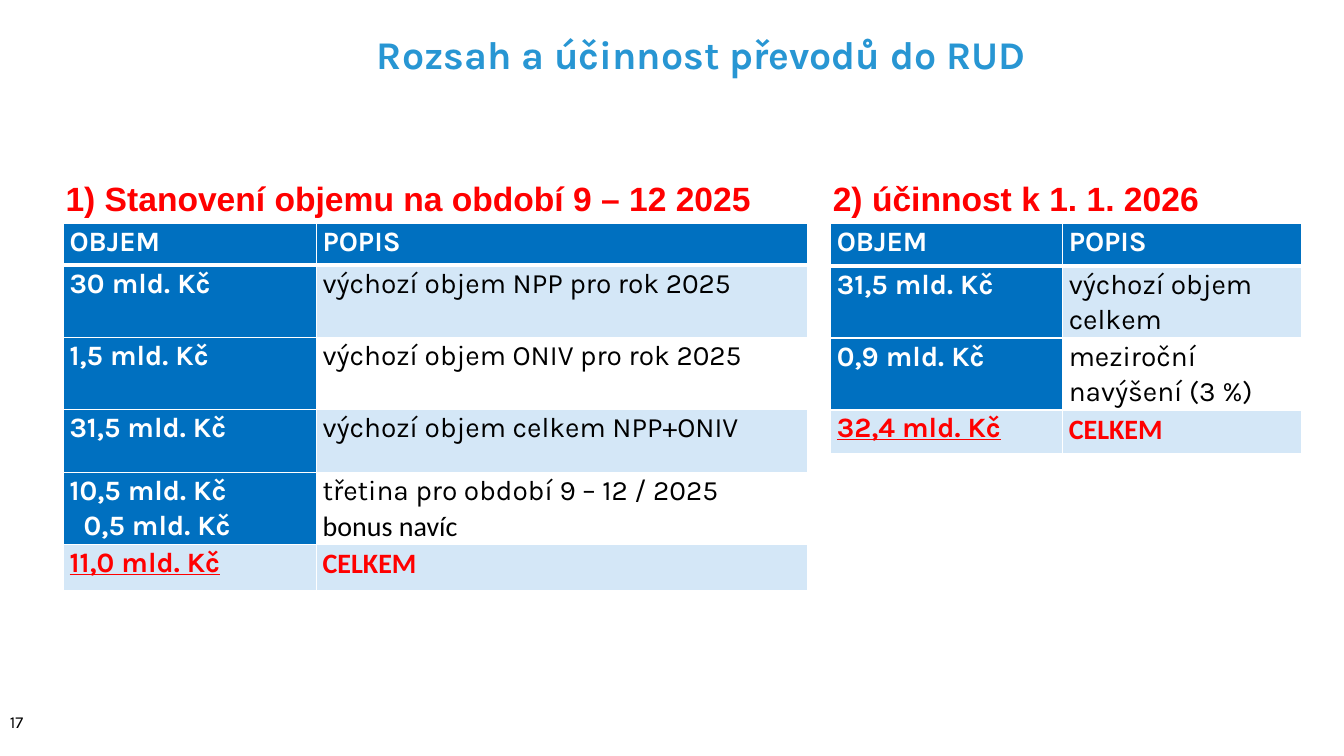
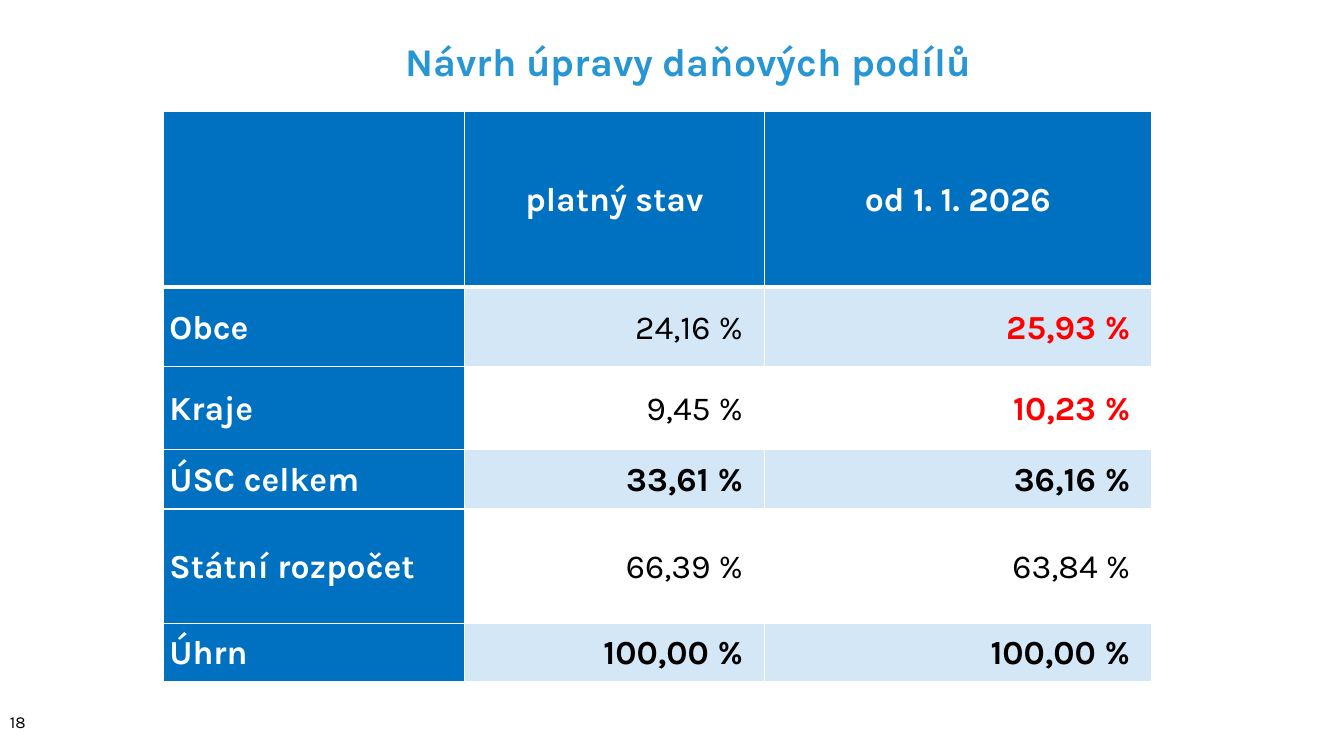
from dataclasses import dataclass

from lxml.etree import SubElement
from pptx import Presentation
from pptx.dml.color import RGBColor
from pptx.enum.text import MSO_ANCHOR, PP_ALIGN
from pptx.oxml.ns import qn
from pptx.util import Inches, Pt


@dataclass(frozen=True)
class Theme:
    """Colours, fonts and type sizes shared by the slides."""

    title: str = "2896D3"
    blue: str = "0070C0"
    light: str = "D4E7F7"
    white: str = "FFFFFF"
    black: str = "000000"
    red: str = "FF0000"
    font: str = "Karla"
    heading_font: str = "Arial"
    accent_font: str = "Calibri"
    title_size: int = 28
    large_size: int = 24
    table_size: int = 20
    number_size: int = 12


THEME = Theme()
LABEL = {"color": THEME.white, "bold": True}
TOTAL = {"color": THEME.red, "bold": True}
TOTAL_AMOUNT = {**TOTAL, "underline": True}
TOTAL_NAME = {**TOTAL, "font": THEME.accent_font}


def write(paragraph, text, *, size=THEME.table_size, font=THEME.font, color=THEME.black,
          bold=False, underline=False, align=PP_ALIGN.LEFT, spacing=1.0, indent=0):
    """Put one formatted run into a paragraph."""
    paragraph._p.get_or_add_pPr().set("marL", str(Inches(indent)))
    paragraph.alignment = align
    paragraph.line_spacing = spacing
    run = paragraph.add_run()
    run.text = text
    run.font.size = Pt(size)
    run.font.name = font
    run.font.bold = bold
    run.font.underline = underline
    run.font.color.rgb = RGBColor.from_string(color)


def set_margins(target, left, top, right, bottom):
    """Set the inner margins of a text frame or cell in inches."""
    target.margin_left, target.margin_top = Inches(left), Inches(top)
    target.margin_right, target.margin_bottom = Inches(right), Inches(bottom)


def add_text(slide, box, text, *, margins=(0.1, 0.05, 0.1, 0.05),
             anchor=MSO_ANCHOR.MIDDLE, **style):
    """Add a text box with one line of text."""
    frame = slide.shapes.add_textbox(*map(Inches, box)).text_frame
    frame.word_wrap = True
    frame.vertical_anchor = anchor
    set_margins(frame, *margins)
    write(frame.paragraphs[0], text, **style)


def add_slide(presentation, title, number, title_position, title_spacing=1.0):
    """Add a slide with its title and page number."""
    slide = presentation.slides.add_slide(presentation.slide_layouts[5])
    shape = slide.shapes.title
    shape.left, shape.top = map(Inches, title_position)
    shape.width, shape.height = Inches(11.81), Inches(1.08)
    frame = shape.text_frame
    frame.word_wrap = True
    frame.vertical_anchor = MSO_ANCHOR.MIDDLE
    set_margins(frame, 0.2, 0.05, 0.1, 0.05)
    write(frame.paragraphs[0], title, size=THEME.title_size, color=THEME.title,
          bold=True, align=PP_ALIGN.CENTER, spacing=title_spacing)
    add_text(slide, (0, 6.95, 0.48, 0.43), str(number), size=THEME.number_size)
    return slide


def set_borders(cell, top, bottom):
    """Draw white cell borders with the given top and bottom widths."""
    properties = cell._tc.get_or_add_tcPr()
    for side, width in (("L", 1), ("R", 1), ("T", top), ("B", bottom)):
        line = SubElement(properties, qn(f"a:ln{side}"), w=str(Pt(width)))
        fill = SubElement(line, qn("a:solidFill"))
        SubElement(fill, qn("a:srgbClr"), val=THEME.white)


def fill_cell(cell, lines, fill, row, anchor, right_margin):
    """Format one cell and write its lines of (text, style)."""
    set_borders(cell, 3 if row == 1 else 1, 3 if row == 0 else 1)
    cell.fill.solid()
    cell.fill.fore_color.rgb = RGBColor.from_string(fill)
    cell.vertical_anchor = anchor
    set_margins(cell, 0.06, 0, right_margin, 0)
    frame = cell.text_frame
    for index, (text, style) in enumerate(lines):
        paragraph = frame.add_paragraph() if index else frame.paragraphs[0]
        write(paragraph, text, **style)


def add_table(slide, position, widths, heights, rows, *, anchor=MSO_ANCHOR.TOP,
              number_margin=0.06, light_total=False):
    """Add a banded table with a blue header row and label column."""
    left, top = position
    table = slide.shapes.add_table(
        len(heights), len(widths), Inches(left), Inches(top),
        Inches(sum(widths)), Inches(sum(heights))).table
    table.first_row = table.horz_banding = False
    for column, width in zip(table.columns, widths):
        column.width = Inches(width)
    for row, height in zip(table.rows, heights):
        row.height = Inches(height)
    for row, cells in enumerate(rows):
        for column, lines in enumerate(cells):
            is_total = light_total and row == len(rows) - 1
            is_label = row == 0 or (column == 0 and not is_total)
            band = THEME.light if row % 2 or is_total else THEME.white
            fill_cell(table.cell(row, column), lines, THEME.blue if is_label else band,
                      row, anchor, number_margin if row and column else 0.06)


def add_volume_section(slide, box, heading, widths, heights, entries, total):
    """Add a red heading with a table of volumes below it."""
    left, top, width = box
    add_text(slide, (left, top, width, 0.5), heading, margins=(0.02, 0.05, 0, 0.05),
             size=THEME.large_size, font=THEME.heading_font, **TOTAL)
    spaced = {"spacing": 1.07}
    rows = [[[("OBJEM", LABEL | spaced)], [("POPIS", LABEL | spaced)]]]
    for amounts, descriptions in entries:
        rows.append([[(text, LABEL | spaced | style) for text, style in amounts],
                     [(text, spaced | style) for text, style in descriptions]])
    rows.append([[(total, TOTAL_AMOUNT | spaced)], [("CELKEM", TOTAL_NAME | spaced)]])
    add_table(slide, (left, top + 0.5), widths, heights, rows, light_total=True)


def add_scope_slide(presentation):
    """Build the slide on the scope and effect of the transfers."""
    slide = add_slide(presentation, "Rozsah a účinnost převodů do RUD", 17, (1, -0.01))
    add_volume_section(
        slide, (0.63, 1.72, 7.38), "1) Stanovení objemu na období 9 – 12 2025",
        (2.51, 4.87), (0.41, 0.72, 0.71, 0.63, 0.71, 0.46),
        [([("30 mld. Kč", {})], [("výchozí objem NPP pro rok 2025", {})]),
         ([("1,5 mld. Kč", {})], [("výchozí objem ONIV pro rok 2025", {})]),
         ([("31,5 mld. Kč", {})], [("výchozí objem celkem NPP+ONIV", {})]),
         ([("10,5 mld. Kč", {}), ("0,5 mld. Kč", {"indent": 0.14})],
          [("třetina pro období 9 – 12 / 2025", {}),
           ("bonus navíc", {"font": THEME.accent_font})])],
        "11,0 mld. Kč")
    add_volume_section(
        slide, (8.24, 1.72, 4.67), "2) účinnost k 1. 1. 2026",
        (2.3, 2.37), (0.42, 0.7, 0.7, 0.43),
        [([("31,5 mld. Kč", {})], [("výchozí objem celkem", {})]),
         ([("0,9 mld. Kč", {})], [("meziroční navýšení (3 %)", {})])],
        "32,4 mld. Kč")


def add_shares_slide(presentation):
    """Build the slide on the proposed tax shares."""
    slide = add_slide(presentation, "Návrh úpravy daňových podílů", 18, (0.87, 0.02), 1.2)
    large = {"size": THEME.large_size, "spacing": 1.05}
    header = LABEL | large | {"align": PP_ALIGN.CENTER}
    plain = large | {"align": PP_ALIGN.RIGHT}
    strong = plain | {"bold": True}
    changed = plain | TOTAL
    shares = [
        ("Obce", "24,16 %", plain, "25,93 %", changed),
        ("Kraje", "9,45 %", plain, "10,23 %", changed),
        ("ÚSC celkem", "33,61 %", strong, "36,16 %", strong),
        ("Státní rozpočet", "66,39 %", plain, "63,84 %", plain),
        ("Úhrn", "100,00 %", strong, "100,00 %", strong),
    ]
    rows = [[[], [("platný stav", header)], [("od 1. 1. 2026", header)]]]
    for label, current, current_style, proposed, proposed_style in shares:
        rows.append([[(label, LABEL | large)], [(current, current_style)],
                     [(proposed, proposed_style)]])
    add_table(slide, (1.62, 1.11), (2.99, 2.97, 3.84),
              (1.74, 0.79, 0.82, 0.59, 1.14, 0.57), rows,
              anchor=MSO_ANCHOR.MIDDLE, number_margin=0.21)


def main():
    """Build and save the presentation."""
    presentation = Presentation()
    presentation.slide_width, presentation.slide_height = Inches(13.33), Inches(7.5)
    add_scope_slide(presentation)
    add_shares_slide(presentation)
    presentation.save("out.pptx")


if __name__ == "__main__":
    main()
